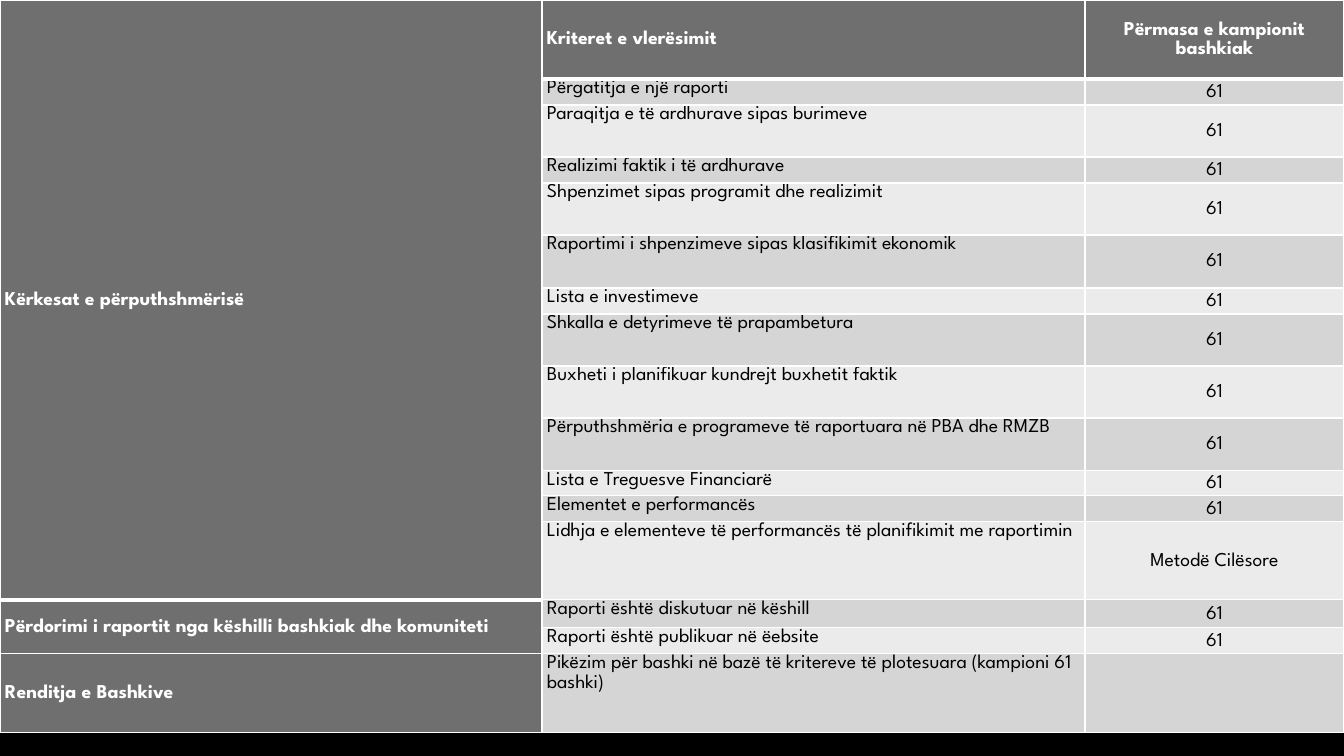
import pptx
import pptx.dml.color
import pptx.enum.text
import pptx.oxml
import pptx.oxml.ns
import pptx.util

PX = 9071
PAGE_WIDTH, PAGE_HEIGHT = 1344, 756
COLUMN_WIDTHS = [542, 543, 259]
FONT = "League Spartan"
WHITE, BLACK, DARK = "FFFFFF", "000000", "6F6F6F"
BANDS = ["EBEBEB", "D5D5D5"]
LEFT = pptx.enum.text.PP_ALIGN.LEFT
CENTER = pptx.enum.text.PP_ALIGN.CENTER
TOP = pptx.enum.text.MSO_ANCHOR.TOP
MIDDLE = pptx.enum.text.MSO_ANCHOR.MIDDLE

HEADER = (79, "Kriteret e vlerësimit", "Përmasa e kampionit bashkiak")
GROUPS = [
    ("Kërkesat e përputhshmërisë", [
        (26, "Përgatitja e një raporti", "61"),
        (52, "Paraqitja e të ardhurave sipas burimeve", "61"),
        (26, "Realizimi faktik i të ardhurave", "61"),
        (52, "Shpenzimet sipas programit dhe realizimit", "61"),
        (53, "Raportimi i shpenzimeve sipas klasifikimit ekonomik", "61"),
        (26, "Lista e investimeve", "61"),
        (52, "Shkalla e detyrimeve të prapambetura", "61"),
        (52, "Buxheti i planifikuar kundrejt buxhetit faktik", "61"),
        (53, "Përputhshmëria e programeve të raportuara në PBA dhe RMZB", "61"),
        (25, "Lista e Treguesve Financiarë", "61"),
        (26, "Elementet e performancës", "61"),
        (78, "Lidhja e elementeve të performancës të planifikimit me raportimin",
         "Metodë Cilësore"),
    ]),
    ("Përdorimi i raportit nga këshilli bashkiak dhe komuniteti", [
        (28, "Raporti është diskutuar në këshill", "61"),
        (26, "Raporti është publikuar në ëebsite", "61"),
    ]),
    ("Renditja e Bashkive", [
        (79, "Pikëzim për bashki në bazë të kritereve të plotesuara (kampioni 61 bashki)",
         ""),
    ]),
]


def px(length):
    return pptx.util.Emu(length * PX)


def color(value):
    return pptx.dml.color.RGBColor.from_string(value)


def paint(fill, value):
    fill.solid()
    fill.fore_color.rgb = color(value)


def set_borders(cell, bottom_width):
    properties = cell._tc.get_or_add_tcPr()
    for side, points in (("L", 1), ("R", 1), ("T", 1), ("B", bottom_width)):
        properties.append(pptx.oxml.parse_xml(
            f'<a:ln{side} {pptx.oxml.ns.nsdecls("a")} w="{points * 12700}">'
            f'<a:solidFill><a:srgbClr val="{WHITE}"/></a:solidFill></a:ln{side}>'))


def fill_cell(cell, text, fill, ink=BLACK, bold=False, align=LEFT, anchor=MIDDLE,
              bottom_width=1):
    set_borders(cell, bottom_width)
    paint(cell.fill, fill)
    cell.margin_left = cell.margin_right = px(5)
    cell.margin_top = cell.margin_bottom = 0
    cell.vertical_anchor = anchor
    cell.text_frame.text = text
    para = cell.text_frame.paragraphs[0]
    para.alignment = align
    para.line_spacing = 1.07
    para.space_after = pptx.util.Pt(8)
    for font in [para.font] + [span.font for span in para.runs]:
        font.name = FONT
        font.size = pptx.util.Pt(14)
        font.bold = bold
        font.color.rgb = color(ink)


def fill_dark_cell(cell, text, align=LEFT, bottom_width=1):
    fill_cell(cell, text, DARK, WHITE, True, align, MIDDLE, bottom_width)


def add_criteria_table(page):
    rows = [HEADER] + [row for _, members in GROUPS for row in members]
    heights = [row[0] for row in rows]
    table = page.shapes.add_table(len(rows), len(COLUMN_WIDTHS), 0, 0,
                                  px(PAGE_WIDTH), px(sum(heights))).table
    table.first_row = table.horz_banding = False
    for column, width in zip(table.columns, COLUMN_WIDTHS):
        column.width = px(width)
    for row, height in zip(table.rows, heights):
        row.height = px(height)

    fill_dark_cell(table.cell(0, 1), HEADER[1], LEFT, 3)
    fill_dark_cell(table.cell(0, 2), HEADER[2], CENTER, 3)
    for index, (_, criterion, sample) in enumerate(rows[1:], 1):
        band = BANDS[index % 2]
        fill_cell(table.cell(index, 1), criterion, band, anchor=TOP)
        fill_cell(table.cell(index, 2), sample, band, align=CENTER)

    first, last = 0, 0
    for title, members in GROUPS:
        last += len(members)
        fill_dark_cell(table.cell(first, 0), title, LEFT, 1 if first else 3)
        if last > first:
            table.cell(first, 0).merge(table.cell(last, 0))
        first = last + 1


def main():
    deck = pptx.Presentation()
    deck.slide_width, deck.slide_height = px(PAGE_WIDTH), px(PAGE_HEIGHT)
    page = deck.slides.add_slide(deck.slide_layouts[6])
    paint(page.background.fill, BLACK)
    add_criteria_table(page)
    deck.save("out.pptx")


if __name__ == "__main__":
    main()
